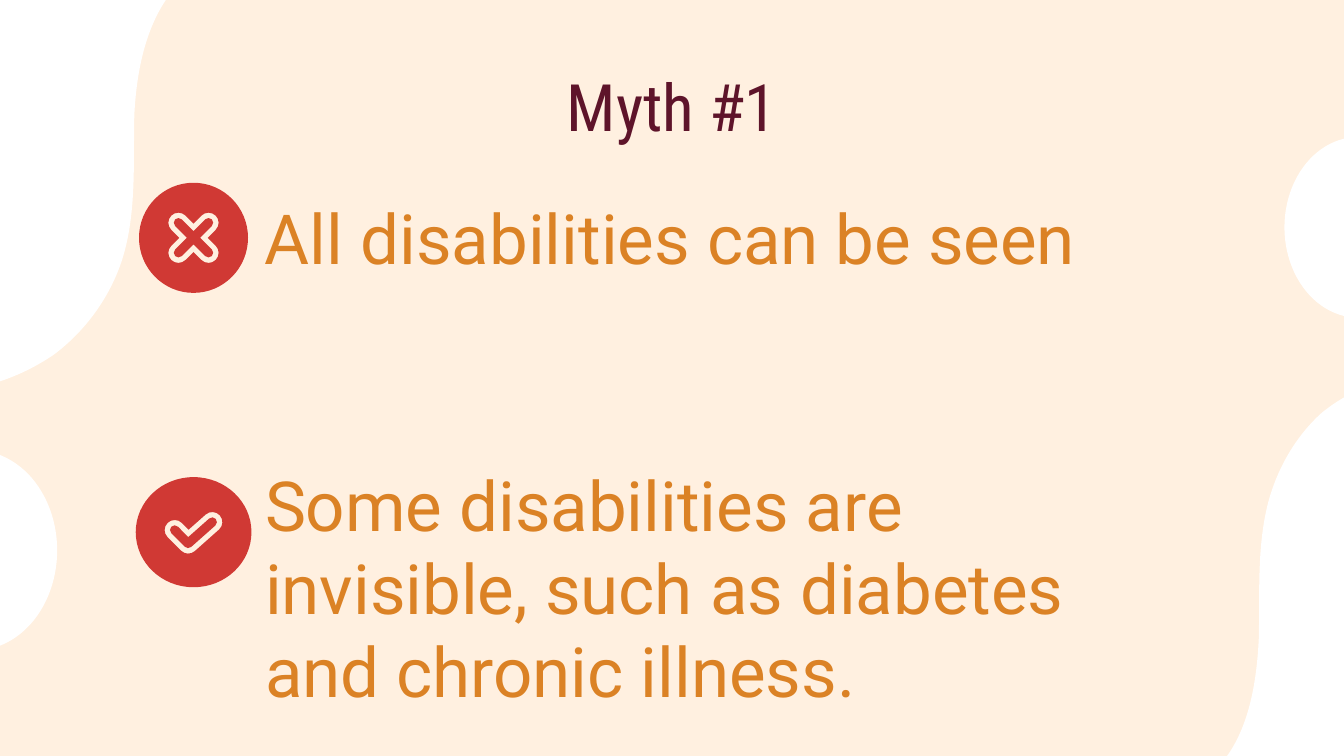
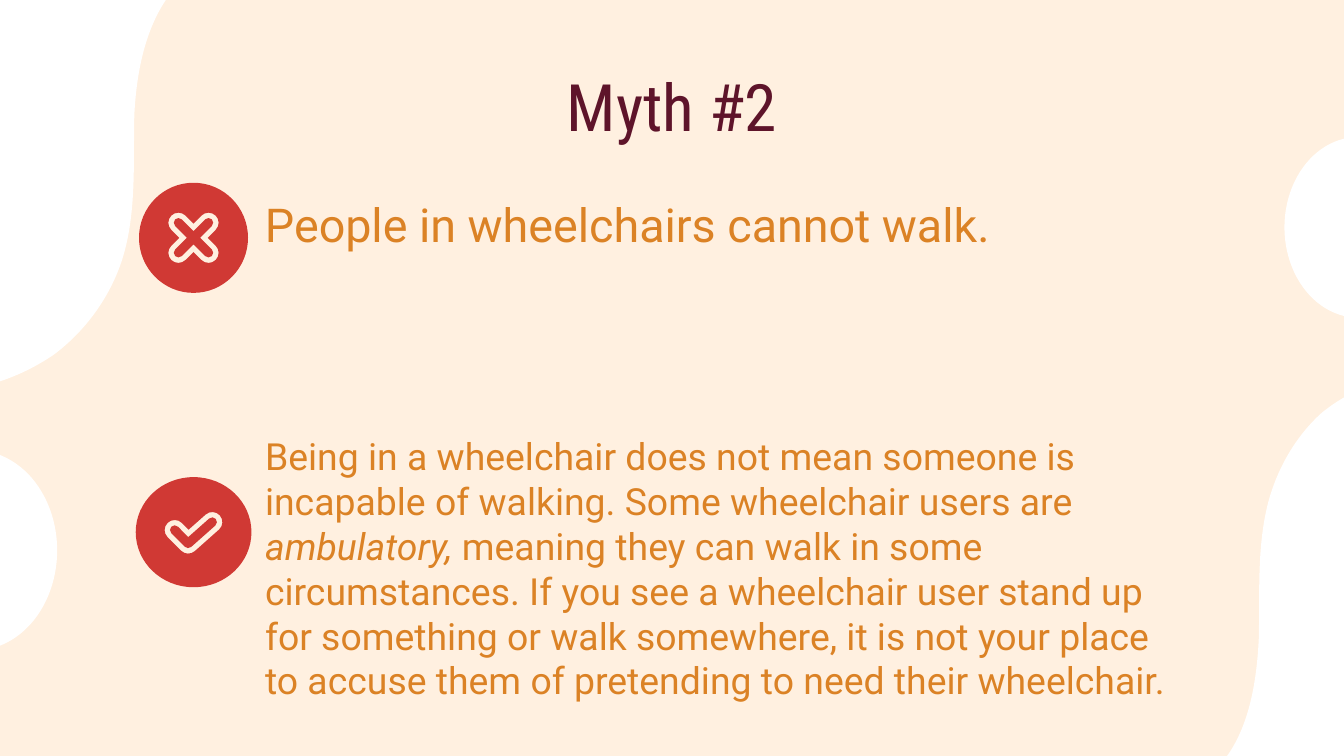
from math import ceil, cos, radians, sin, tan

from pptx import Presentation
from pptx.dml.color import RGBColor as Rgb
from pptx.enum.shapes import MSO_SHAPE as Shape
from pptx.enum.text import MSO_ANCHOR as Anchor, PP_ALIGN as Align
from pptx.oxml.ns import qn
from pptx.util import Pt

CREAM = Rgb(0xFF, 0xF0, 0xE0)
WHITE = Rgb(0xFF, 0xFF, 0xFF)
PLUM = Rgb(0x5E, 0x14, 0x2A)
AMBER = Rgb(0xDB, 0x82, 0x25)
RED = Rgb(0xD0, 0x39, 0x34)

HEAD, BODY = "Roboto Condensed", "Roboto"
MID, LEFT = 103.7, 134.9

WAVE = [
    [(10, 0)],
    [(0, 221)],
    [(21.6, 221), (42.5, 213.8), (60.5, 201.6)],
    [(77.8, 188.6), (90.7, 170.6), (97.2, 150.5)],
    [(105.1, 125.3), (103, 98.6), (103.7, 72.7)],
    [(105.1, 46.8), (110.9, 18.7), (129.6, 0.7)],
    [(126, 0)],
]
CROSS = [(45, 11.4), (135, 11.4), (225, 11.4), (315, 11.4)]
TICK = [(225, 10.2), (318.4, 17.3)]


def arc(x, y, rx, ry, start, end):
    """Return a start point and the curves of an elliptic arc."""
    count = ceil((end - start) / 90)
    step = radians((end - start) / count)
    k = 4 / 3 * tan(step / 4)

    def spot(t, pull):
        """Return the point at angle t, pulled along its tangent."""
        return (x + rx * (cos(t) - pull * sin(t)),
                y + ry * (sin(t) + pull * cos(t)))

    out = [[spot(radians(start), 0)]]
    for i in range(count):
        t = radians(start) + i * step
        out.append([spot(t, k), spot(t + step, -k), spot(t + step, 0)])
    return out


def bars(x, y, arms, r):
    """Outline round-ended arms of half-width r that meet at a hub."""
    out = []
    for i, (turn, size) in enumerate(arms):
        t = radians(turn)
        out += arc(x + size * cos(t), y + size * sin(t), r, r,
                   turn - 90, turn + 90)
        gap = (arms[(i + 1) % len(arms)][0] - turn) % 360
        if gap < 180:
            half = radians(gap / 2)
            far = r / sin(half)
            out.append([(x + far * cos(t + half), y + far * sin(t + half))])
        else:
            out += arc(x, y, r, r, turn + 90, turn + gap - 90)
    return out


class Deck:
    """Hold the style and the slide being drawn."""

    def __init__(self):
        """Open an empty wide deck."""
        self.prs = Presentation()
        self.prs.slide_width, self.prs.slide_height = Pt(720), Pt(405)

    def page(self):
        """Start a slide with the shared backdrop."""
        self.slide = self.prs.slides.add_slide(self.prs.slide_layouts[6])
        self.shapes = self.slide.shapes
        fill = self.slide.background.fill
        fill.solid()
        fill.fore_color.rgb = CREAM
        self.wave(-31.7, -11.5, 1, 1)
        self.wave(755.3, 409.7, -0.78, -0.935)
        self.oval(688.1, 73.4, 79.2, 96.8)
        self.oval(-57.6, 241.2, 88.2, 107.3)

    def paint(self, shape, color):
        """Give a shape a flat fill with no line or shadow."""
        shape.shadow.inherit = False
        shape.fill.solid()
        shape.fill.fore_color.rgb = color
        shape.line.fill.background()

    def oval(self, x, y, w, h):
        """Add a white oval."""
        self.paint(self.shapes.add_shape(
            Shape.OVAL, Pt(x), Pt(y), Pt(w), Pt(h)), WHITE)

    def free(self, shapes, color, *loops):
        """Add closed loops of lines (one point) and curves (three)."""
        pen = None
        for loop in loops:
            dots = [(Pt(x), Pt(y)) for step in loop for x, y in step]
            if pen is None:
                pen = shapes.build_freeform(*dots[0])
            else:
                pen.move_to(*dots[0])
            pen.add_line_segments(dots[1:], close=True)
        shape = pen.convert_to_shape()
        nodes = iter(list(shape.element.iter(qn("a:lnTo"))))
        for step in (step for loop in loops for step in loop[1:]):
            first, *rest = [next(nodes) for _ in step]
            if rest:
                first.tag = qn("a:cubicBezTo")
            for node in rest:
                first.append(node[0])
                node.getparent().remove(node)
        self.paint(shape, color)

    def wave(self, x, y, sx, sy):
        """Add a white corner wave, flipped by negative scales."""
        self.free(self.shapes, WHITE,
                  [[(x + sx * p, y + sy * q) for p, q in step]
                   for step in WAVE])

    def badge(self, y, rx, arms, dx=0, dy=0):
        """Add a red disc with an outlined sign cut out of it."""
        shapes = self.shapes.add_group_shape().shapes
        hub = MID + dx, y + dy
        disc = arc(MID, y, rx, 29.5, 0, 360)
        self.free(shapes, RED, disc, bars(*hub, arms, 5.4))
        self.free(shapes, RED, bars(*hub, arms, 2.5))

    def text(self, box, runs, size, font=BODY, color=AMBER, align=Align.LEFT):
        """Add a paragraph of (words, italic) runs."""
        frame = self.shapes.add_textbox(*map(Pt, box)).text_frame
        frame.word_wrap = True
        frame.vertical_anchor = Anchor.TOP
        frame.margin_left = frame.margin_right = Pt(7.2)
        frame.margin_top = frame.margin_bottom = Pt(7.2)
        para = frame.paragraphs[0]
        para.alignment = align
        para.font.name, para.font.size = font, Pt(size)
        para.font.color.rgb = color
        for words, slant in runs:
            run = para.add_run()
            run.text = words
            if slant:
                run.font.italic = True

    def myth(self, title, myth, size, high, fact, small, top, tall):
        """Add a slide that sets a myth against the fact."""
        self.page()
        self.text((113.8, 28.4, 492.5, 45.4), [(title, False)], 35,
                  HEAD, PLUM, Align.CENTER)
        self.text((LEFT, 97.6, 542.9, high), [(myth, False)], size)
        self.badge(127.4, 29.2, CROSS)
        self.badge(285.1, 31, TICK, -2.9, 6.1)
        self.text((LEFT, top, 502.6, tall), fact, small)


def main():
    """Build and save the deck."""
    deck = Deck()
    deck.myth(
        "Myth #1", "All disabilities can be seen", 37, 76.3,
        [("Some disabilities are invisible, such as diabetes "
          "and chronic illness.", False)], 37, 240.5, 149)
    deck.myth(
        "Myth #2", "People in wheelchairs cannot walk.", 25, 61.9,
        [("Being in a wheelchair does not mean someone is incapable of "
          "walking. Some wheelchair users are ", False),
         ("ambulatory, ", True),
         ("meaning they can walk in some circumstances. If you see a "
          "wheelchair user stand up for something or walk somewhere, it is "
          "not your place to accuse them of pretending to need their "
          "wheelchair.", False)], 20, 225, 159.8)
    deck.prs.save("out.pptx")


if __name__ == "__main__":
    main()
